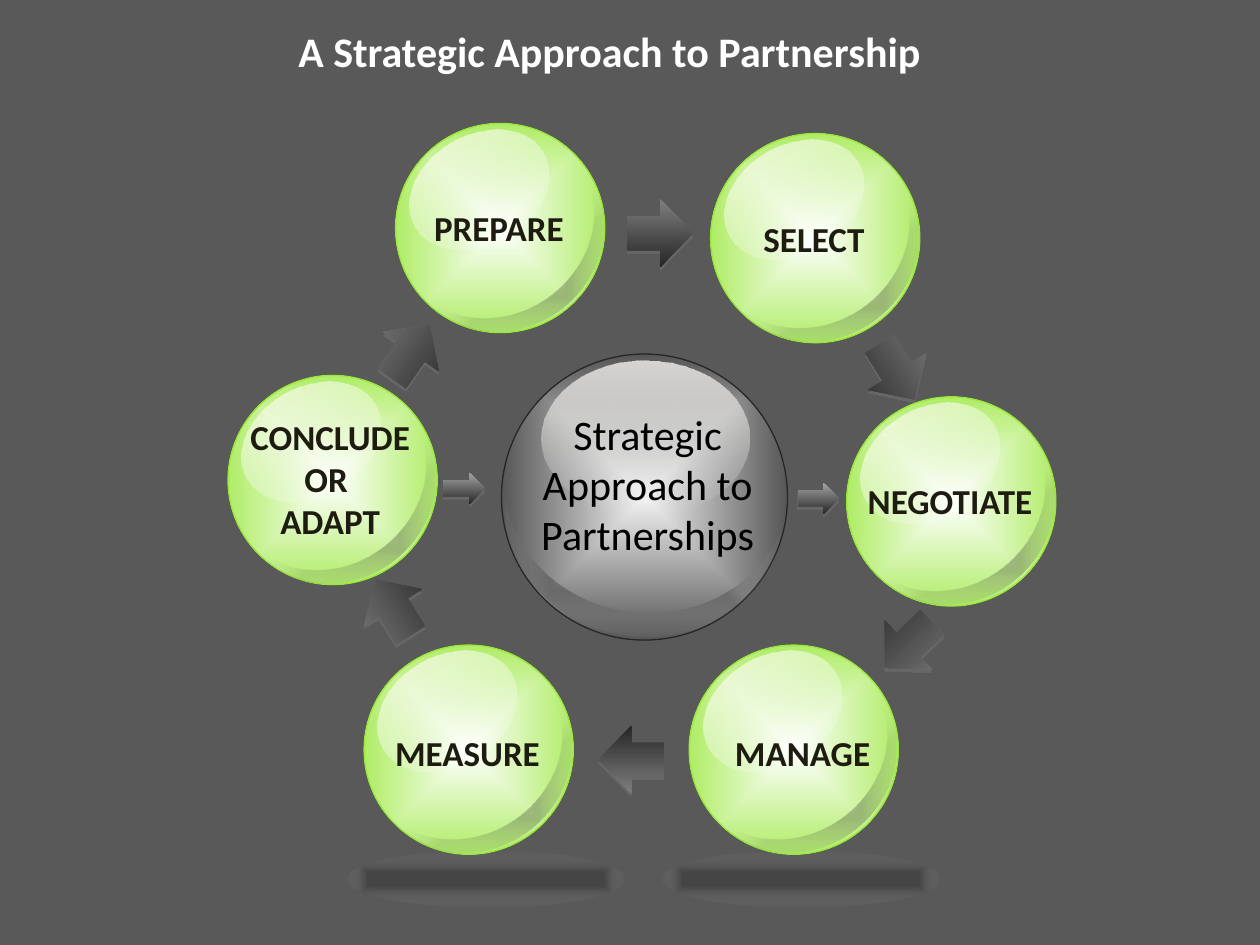
import pptx
import pptx.util
import pptx.dml.color
import pptx.enum.shapes
import pptx.enum.text
import pptx.oxml
import pptx.oxml.ns

RGB = pptx.dml.color.RGBColor
KIND = pptx.enum.shapes.MSO_SHAPE
ALIGN = pptx.enum.text.PP_ALIGN
qn = pptx.oxml.ns.qn

WHITE = RGB(0xFF, 0xFF, 0xFF)
BLACK = RGB(0x00, 0x00, 0x00)
CREAM = RGB(0xFF, 0xFC, 0xF9)
PALE = RGB(0xF2, 0xF2, 0xF2)
SILVER = RGB(0xA6, 0xA6, 0xA6)
GREY = RGB(0x7F, 0x7F, 0x7F)
SHADE = RGB(0x80, 0x80, 0x80)
SLATE = RGB(0x59, 0x59, 0x59)
DARK = RGB(0x40, 0x40, 0x40)
COAL = RGB(0x26, 0x26, 0x26)
GREEN = RGB(0x98, 0xE7, 0x39)
INK = RGB(0x1E, 0x1C, 0x11)

# Gradient stops: place in percent, colour, opacity in percent
SHINE = [(0, CREAM, 77), (100, WHITE, 0)]
SHADOW = [(24, BLACK, 24), (100, WHITE, 0)]
FLOOR = [(24, BLACK, 22), (100, WHITE, 0)]
LEAF = [(0, WHITE, 100), (100, GREEN, 100)]
STEEL = [(0, PALE, 100), (100, DARK, 100)]

deck = pptx.Presentation()
deck.slide_width = pptx.util.Inches(10)
deck.slide_height = pptx.util.Inches(7.5)
CELL = deck.slide_width // 100  # grid of 100 columns by 75 rows
slide = deck.slides.add_slide(deck.slide_layouts[6])
slide.background.fill.solid()
slide.background.fill.fore_color.rgb = SLATE


def form(home, kind, box, stops, turn=0, edge=None, flip=False, linear=False):
    """Add a preset shape with a gradient, running down or out from the centre."""
    shape = home.add_shape(kind, *[round(n * CELL) for n in box])
    shape.rotation = turn
    shape.shadow.inherit = False
    if flip:
        shape._element.spPr.find(qn("a:xfrm")).set("flipH", "1")
    if kind == KIND.MOON:
        shape.adjustments[0] = 0.19
    if edge is None:
        shape.line.fill.background()
    else:
        shape.line.color.rgb = edge
        shape.line.width = pptx.util.Pt(0.75)
    marks = "".join(
        f'<a:gs pos="{place * 1000}"><a:srgbClr val="{tone}">'
        f'<a:alpha val="{alpha * 1000}"/></a:srgbClr></a:gs>'
        for place, tone, alpha in stops)
    course = ('<a:lin ang="5400000" scaled="0"/>' if linear else
              '<a:path path="shape"><a:fillToRect l="50000" t="50000" '
              'r="50000" b="50000"/></a:path>')
    shape.fill.gradient()
    old = shape._element.spPr.find(qn("a:gradFill"))
    old.getparent().replace(old, pptx.oxml.parse_xml(
        f'<a:gradFill {pptx.oxml.ns.nsdecls("a")} rotWithShape="1">'
        f'<a:gsLst>{marks}</a:gsLst>{course}</a:gradFill>'))
    return shape


def write(box, lines, size, tone, bold=False, align=ALIGN.CENTER):
    frame = slide.shapes.add_textbox(*[round(n * CELL) for n in box]).text_frame
    frame.word_wrap = True
    frame.text = "\n".join(lines)
    for para in frame.paragraphs:
        para.alignment = align
        para.font.name = "Calibri"
        para.font.size = pptx.util.Pt(size)
        para.font.bold = bold
        para.font.color.rgb = tone


# Hub
hub = slide.shapes.add_group_shape().shapes
form(hub, KIND.OVAL, (39.8, 28.1, 22.7, 22.7), STEEL, 350.9, COAL)
form(hub, KIND.OVAL, (43, 28.6, 16.5, 12.3), SHINE, linear=True)
form(hub, KIND.MOON, (45.6, 34.4, 10, 22.1), SHADOW, 275.9)
write((40, 31.9, 22.8, 13.1), ["Strategic Approach to Partnerships"], 24, BLACK)

# Balls: left, top, label lines, label shift across and down
balls = [
    (56.4, 10.6, ["SELECT"], 0.3, 6.2),
    (67.2, 31.5, ["NEGOTIATE"], 0.3, 6.1),
    (54.7, 51.2, ["MANAGE"], 1.1, 6.4),
    (31.4, 9.8, ["PREPARE"], 0.3, 6.1),
    (18.1, 29.8, ["CONCLUDE OR ", "ADAPT"], 0.2, 2.7),
    (28.9, 51.2, ["MEASURE"], 0.3, 6.4),
]
for x, y, *rest in balls:
    ball = slide.shapes.add_group_shape().shapes
    form(ball, KIND.OVAL, (x, y, 16.6, 16.6), LEAF, 338.6, GREEN, flip=True)
    form(ball, KIND.MOON, (x + 7.2, y + 3.8, 7.3, 16.1), SHADOW, 53.6, flip=True)
    form(ball, KIND.OVAL, (x + 0.75, y + 0.9, 11.7, 8.7), SHINE, 329.4,
         flip=True, linear=True)

for x in (27.5, 52.5):
    form(slide.shapes, KIND.OVAL, (x, 67.5, 22.1, 4.5), FLOOR)

for x, y, lines, across, down in balls:
    write((x + across, y + down, 15.8, 0.7 + 6.7 * len(lines)), lines, 20, INK, True)

# Arrows: left, top, turn; then the two small ones beside the hub
BIG, SMALL = (5.2, 5.4, GREY), (3.3, 2.5, SILVER)
arrows = [
    (68.6, 26.8, 57.8, BIG),
    (69.5, 48.5, 136, BIG),
    (47.5, 57.6, 180, BIG),
    (28.6, 45.5, 237.9, BIG),
    (30, 25.2, 305.1, BIG),
    (49.8, 15.8, 0, BIG),
    (63.3, 38.3, 0, SMALL),
    (35.2, 37.5, 0, SMALL),
]
for x, y, turn, (wide, high, tone) in arrows:
    arrow = form(slide.shapes, KIND.RIGHT_ARROW, (x, y, wide, high),
                 [(0, tone, 100), (100, COAL, 100)], turn, linear=True)
    arrow._element.spPr.find(qn("a:effectLst")).append(pptx.oxml.parse_xml(
        f'<a:outerShdw {pptx.oxml.ns.nsdecls("a")} dist="{pptx.util.Pt(1.8)}" '
        f'dir="5400000" rotWithShape="0"><a:srgbClr val="{SHADE}">'
        '<a:alpha val="35000"/></a:srgbClr></a:outerShdw>'))

write((22.7, 1.5, 68.3, 5), ["A Strategic Approach to Partnership"], 24, WHITE,
      True, ALIGN.LEFT)

deck.save("out.pptx")
